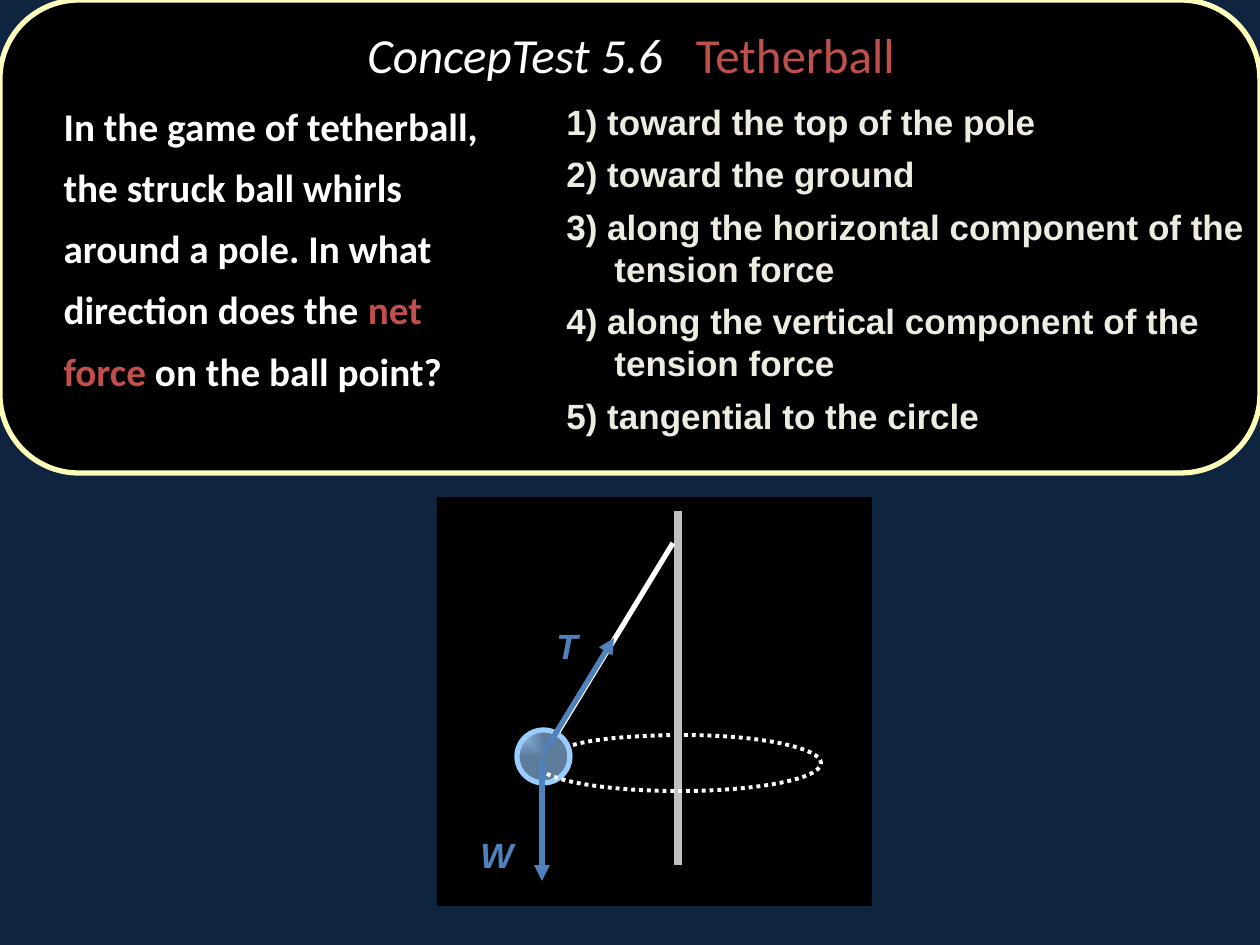
from lxml import etree
from pptx import Presentation
from pptx.dml.color import RGBColor
from pptx.enum.dml import MSO_LINE
from pptx.enum.shapes import MSO_CONNECTOR, MSO_SHAPE
from pptx.enum.text import MSO_ANCHOR, MSO_AUTO_SIZE, PP_ALIGN
from pptx.oxml.ns import qn
from pptx.util import Pt

STRAIGHT = MSO_CONNECTOR.STRAIGHT
DOTTED = MSO_LINE.ROUND_DOT
RECT, ROUND_RECT, OVAL = MSO_SHAPE.RECTANGLE, MSO_SHAPE.ROUNDED_RECTANGLE, MSO_SHAPE.OVAL
TOP, MIDDLE = MSO_ANCHOR.TOP, MSO_ANCHOR.MIDDLE
NO_FIT = MSO_AUTO_SIZE.NONE
LEFT, CENTER = PP_ALIGN.LEFT, PP_ALIGN.CENTER

NAVY = RGBColor(0x0F, 0x24, 0x3E)
BLACK = RGBColor(0x00, 0x00, 0x00)
WHITE = RGBColor(0xFF, 0xFF, 0xFF)
CREAM = RGBColor(0xFC, 0xFE, 0xB9)
IVORY = RGBColor(0xEE, 0xEC, 0xE1)
RED = RGBColor(0xC0, 0x50, 0x4D)
BLUE = RGBColor(0x4F, 0x81, 0xBD)
SILVER = RGBColor(0xC0, 0xC0, 0xC0)
SKY = RGBColor(0x99, 0xCC, 0xFF)
STEEL = RGBColor(0x7D, 0xA7, 0xD1)

OPTIONS = [
    "1) toward the top of the pole",
    "2) toward the ground",
    "3) along the horizontal component of the tension force",
    "4) along the vertical component of the tension force",
    "5) tangential to the circle",
]

# Orbit curves: a start, then three Bézier points for each segment
ORBIT_FRONT = [(247, 238), (323, 238), (384, 251), (384, 266),
               (384, 282), (320, 294), (242, 294),
               (170, 294), (110, 284), (101, 270)]
ORBIT_BACK = [(136, 248), (161, 241), (198, 239), (237, 238)]


def px(n):
    return round(n * 914400 / 126)


def place(sp, x, y, w, h):
    sp.left, sp.top, sp.width, sp.height = px(x), px(y), px(w), px(h)


def add_run(p, text, size, font, color, bold=False, italic=False):
    r = p.add_run()
    r.text = text
    r.font.size, r.font.name = Pt(size), font
    r.font.bold, r.font.italic = bold, italic
    r.font.color.rgb = color


def hang(p, indent):
    pPr = p._p.get_or_add_pPr()
    pPr.set("marL", str(px(indent)))
    pPr.set("indent", str(-px(indent)))
    return pPr


def add_shape(shapes, kind, x, y, w, h, fill, line=None):
    sp = shapes.add_shape(kind, px(x), px(y), px(w), px(h))
    sp.shadow.inherit = False
    sp.fill.solid()
    sp.fill.fore_color.rgb = fill
    if line:
        sp.line.color.rgb, sp.line.width = line, Pt(3)
    else:
        sp.line.fill.background()
    return sp


def add_line(shapes, start, end, color, width, arrow=False):
    c = shapes.add_connector(STRAIGHT, *map(px, start + end))
    c.line.color.rgb, c.line.width = color, Pt(width)
    if arrow:
        etree.SubElement(c.line._get_or_add_ln(), qn("a:tailEnd"), type="triangle")
    etree.SubElement(c._element.spPr, qn("a:effectLst"))


def add_dotted_curve(shapes, x, y, points):
    points = [(px(x + dx), px(y + dy)) for dx, dy in points]
    fb = shapes.build_freeform(*points[0])
    fb.add_line_segments(points[1:], close=False)
    sp = fb.convert_to_shape()
    sp.shadow.inherit = False
    sp.fill.background()
    sp.line.color.rgb, sp.line.width = WHITE, Pt(2.25)
    sp.line.dash_style = DOTTED
    # Join every three line points into one cubic curve
    path = next(sp._element.iter(qn("a:path")))
    lines = path.findall(qn("a:lnTo"))
    for i in range(0, len(lines), 3):
        curve = etree.SubElement(path, qn("a:cubicBezTo"))
        for line in lines[i:i + 3]:
            curve.append(line[0])
            path.remove(line)


def add_label(shapes, text, x, y, w, h):
    tf = shapes.add_textbox(px(x), px(y), px(w), px(h)).text_frame
    tf.word_wrap = False
    add_run(tf.paragraphs[0], text, 20, "Arial", BLUE, bold=True, italic=True)


def fill_title(sp, x, y, w, h):
    place(sp, x, y, w, h)
    tf = sp.text_frame
    tf.auto_size, tf.vertical_anchor = NO_FIT, MIDDLE
    p = tf.paragraphs[0]
    p.alignment, p.line_spacing = CENTER, 0.9
    add_run(p, "ConcepTest 5.6   ", 28, "Calibri", WHITE, italic=True)
    add_run(p, "Tetherball", 28, "Calibri", RED)


def fill_question(sp, x, y, w, h):
    place(sp, x, y, w, h)
    tf = sp.text_frame
    tf.auto_size, tf.vertical_anchor = NO_FIT, TOP
    p = tf.paragraphs[0]
    p.alignment, p.line_spacing, p.space_before = LEFT, 1.3, Pt(11)
    etree.SubElement(hang(p, 55), qn("a:buNone"))
    add_run(p, "\t", 15.4, "Calibri", WHITE, bold=True)
    for text, color in [
        ("In the game of tetherball, the struck ball whirls around a pole. "
         "In what direction does the ", WHITE),
        ("net force", RED),
        (" on the ball point?", WHITE),
    ]:
        add_run(p, text, 22.4, "Calibri", color, bold=True)


def add_options(s, x, y, w, h):
    tf = s.shapes.add_textbox(px(x), px(y), px(w), px(h)).text_frame
    tf.word_wrap = True
    for i, text in enumerate(OPTIONS):
        p = tf.add_paragraph() if i else tf.paragraphs[0]
        p.space_before = Pt(6)
        hang(p, 48)
        add_run(p, text, 20, "Arial", IVORY, bold=True)


def add_ball(shapes, x, y, size):
    sp = add_shape(shapes, OVAL, x, y, size, size, SKY, SKY)
    sp.fill.gradient()
    for stop, color, pos in zip(sp.fill.gradient_stops, (SKY, STEEL), (0, 1)):
        stop.color.rgb, stop.position = color, pos
    # Rectangular gradient from the top left corner, its far end see-through
    grad = sp._element.spPr.find(qn("a:gradFill"))
    etree.SubElement(list(grad.iter(qn("a:srgbClr")))[-1], qn("a:alpha"), val="75000")
    grad.remove(grad.find(qn("a:lin")))
    path = etree.SubElement(grad, qn("a:path"), path="rect")
    etree.SubElement(path, qn("a:fillToRect"), r="100000", b="100000")


def add_diagram(s, x, y, w, h):
    shapes = s.shapes.add_group_shape().shapes
    add_shape(shapes, RECT, x, y, w, h, BLACK)
    # Pole, rope and ball
    add_line(shapes, (x + 241, y + 14), (x + 241, y + 368), SILVER, 4.5)
    add_line(shapes, (x + 236, y + 46), (x + 121, y + 235), WHITE, 3)
    add_ball(shapes, x + 80, y + 233, 53)
    # Orbit, in front of and behind the pole
    for points in (ORBIT_FRONT, ORBIT_BACK):
        add_dotted_curve(shapes, x, y, points)
    # Tension and weight
    add_line(shapes, (x + 106, y + 257), (x + 177, y + 141), BLUE, 3, arrow=True)
    add_line(shapes, (x + 105, y + 263), (x + 105, y + 384), BLUE, 3, arrow=True)
    add_label(shapes, "W", x + 31, y + 330, 58, 54)
    add_label(shapes, "T", x + 107, y + 121, 47, 54)


def main():
    prs = Presentation()
    prs.slide_width, prs.slide_height = px(1260), px(945)
    s = prs.slides.add_slide(prs.slide_layouts[1])
    s.background.fill.solid()
    s.background.fill.fore_color.rgb = NAVY

    # Panel goes behind the placeholders
    panel = add_shape(s.shapes, ROUND_RECT, 0, 0, 1260, 473, BLACK, CREAM)
    s.shapes.title._element.addprevious(panel._element)

    fill_title(s.shapes.title, 128, 0, 1006, 116)
    add_options(s, 554, 94, 706, 369)
    fill_question(s.placeholders[1], -4, 82, 499, 355)
    add_diagram(s, 437, 497, 435, 409)
    prs.save("out.pptx")


if __name__ == "__main__":
    main()
